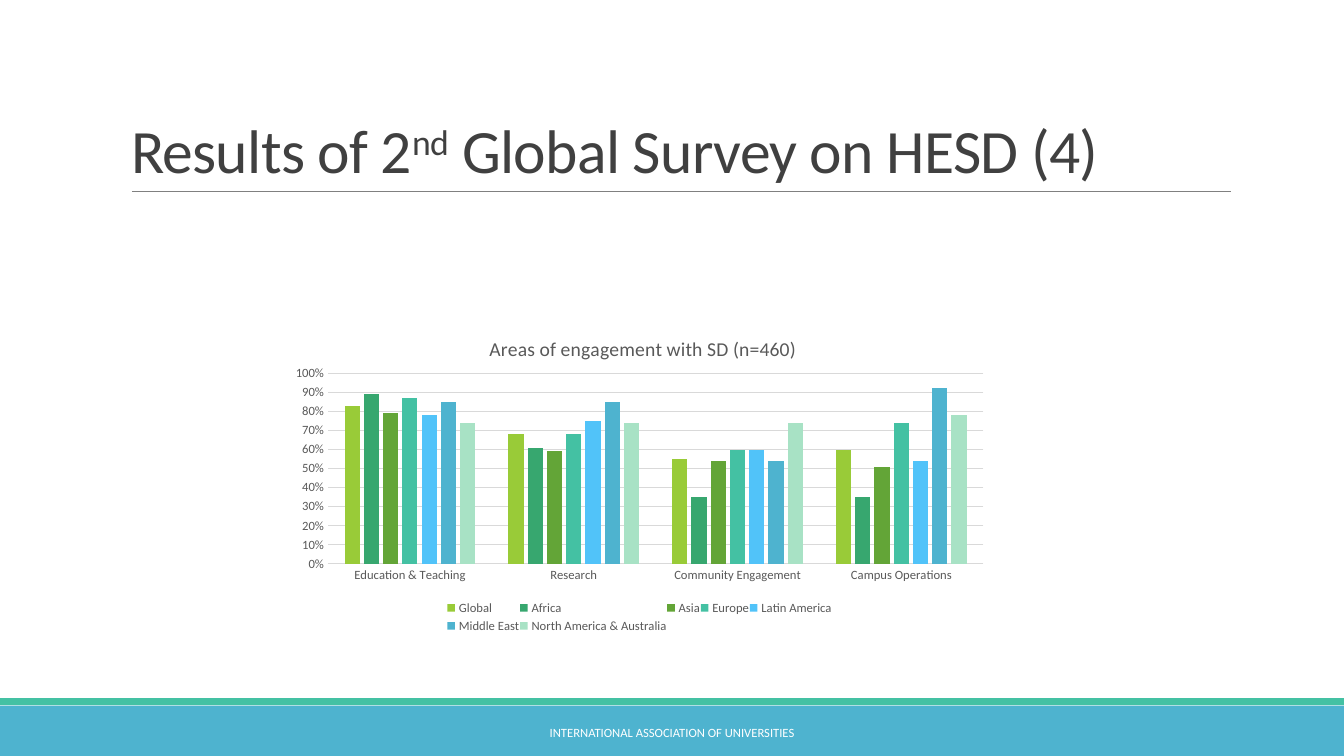
import pptx
import pptx.util
import pptx.dml.color
import pptx.chart.data
import pptx.enum.chart
import pptx.enum.shapes
import pptx.enum.text
import pptx.oxml
import pptx.oxml.ns

Pt = pptx.util.Pt
qn = pptx.oxml.ns.qn
PP_ALIGN = pptx.enum.text.PP_ALIGN
ANCHOR = pptx.enum.text.MSO_ANCHOR

CATEGORIES = ["Education & Teaching", "Research", "Community\u00a0Engagement", "Campus Operations"]
REGIONS = [
    ("Global", "99CB38", (0.83, 0.68, 0.55, 0.6)),
    ("Africa", "37A76F", (0.89, 0.61, 0.35, 0.35)),
    ("Asia", "63A537", (0.79, 0.59, 0.54, 0.51)),
    ("Europe", "44C1A3", (0.87, 0.68, 0.6, 0.74)),
    ("Latin America", "51C3F9", (0.78, 0.75, 0.6, 0.54)),
    ("Middle East", "4EB3CF", (0.85, 0.85, 0.54, 0.92)),
    ("North America & Australia", "A8E2C5", (0.74, 0.74, 0.74, 0.78)),
]


def rgb(value):
    return pptx.dml.color.RGBColor.from_string(value)


def place(element, index, **fractions):
    for old in element.findall(qn("c:layout")):
        element.remove(old)
    layout = pptx.oxml.parse_xml(f"<c:layout {pptx.oxml.ns.nsdecls('c')}><c:manualLayout/></c:layout>")
    settings = {"xMode": "edge", "yMode": "edge", **fractions}
    if element.tag == qn("c:plotArea"):
        settings = {"layoutTarget": "inner", **settings}
    for name, value in settings.items():
        layout[0].makeelement(qn("c:" + name))
        item = pptx.oxml.parse_xml(f'<c:{name} {pptx.oxml.ns.nsdecls("c")} val="{value}"/>')
        layout[0].append(item)
    element.insert(index, layout)


class SlideBuilder:
    font = "Calibri"
    muted = "595959"
    rule = "D9D9D9"

    def __init__(self, prs):
        self.s = prs.slides.add_slide(prs.slide_layouts[5])

    def style(self, font, size, color):
        font.name = self.font
        font.size = Pt(size)
        font.bold = False
        font.color.rgb = rgb(color)

    def band(self, x, y, w, h, color):
        sp = self.s.shapes.add_shape(pptx.enum.shapes.MSO_SHAPE.RECTANGLE, Pt(x), Pt(y), Pt(w), Pt(h))
        sp.shadow.inherit = False
        sp.fill.solid()
        sp.fill.fore_color.rgb = rgb(color)
        sp.line.fill.background()

    def divider(self, x1, x2, y, color):
        line = self.s.shapes.add_connector(
            pptx.enum.shapes.MSO_CONNECTOR.STRAIGHT, Pt(x1), Pt(y), Pt(x2), Pt(y))
        line.line.color.rgb = rgb(color)
        line.line.width = Pt(0.5)
        line._element.spPr.append(pptx.oxml.parse_xml(f"<a:effectLst {pptx.oxml.ns.nsdecls('a')}/>"))

    def title(self, x, y, w, h, parts):
        sp = self.s.shapes.title
        sp.left, sp.top, sp.width, sp.height = Pt(x), Pt(y), Pt(w), Pt(h)
        tf = sp.text_frame
        tf.auto_size = pptx.enum.text.MSO_AUTO_SIZE.NONE
        tf.vertical_anchor = ANCHOR.BOTTOM
        p = tf.paragraphs[0]
        p.alignment = PP_ALIGN.LEFT
        p.line_spacing = 0.85
        for text, baseline in parts:
            r = p.add_run()
            r.text = text
            self.style(r.font, 44, "404040")
            rPr = r.font._element
            rPr.set("spc", "-50")
            rPr.set("baseline", str(baseline * 1000))

    def label(self, x, y, w, h, text, size, color):
        tf = self.s.shapes.add_textbox(Pt(x), Pt(y), Pt(w), Pt(h)).text_frame
        tf.word_wrap = True
        tf.vertical_anchor = ANCHOR.MIDDLE
        tf.text = text
        p = tf.paragraphs[0]
        p.alignment = PP_ALIGN.CENTER
        self.style(p.runs[0].font, size, color)

    def column_chart(self, x, y, w, h, heading, categories, regions):
        data = pptx.chart.data.CategoryChartData(number_format="0%")
        data.categories = categories
        for name, color, values in regions:
            data.add_series(name, values)
        chart = self.s.shapes.add_chart(
            pptx.enum.chart.XL_CHART_TYPE.COLUMN_CLUSTERED, Pt(x), Pt(y), Pt(w), Pt(h), data).chart
        self.style(chart.font, 10, "000000")

        chart.has_title = True
        tf = chart.chart_title.text_frame
        tf.text = heading
        self.style(tf.paragraphs[0].runs[0].font, 14, self.muted)
        chart.chart_title.include_in_layout = False

        chart.has_legend = True
        legend = chart.legend
        legend.position = pptx.enum.chart.XL_LEGEND_POSITION.BOTTOM
        legend.include_in_layout = False
        self.style(legend.font, 9, self.muted)

        plot = chart.plots[0]
        plot.gap_width = 219
        plot.overlap = -27
        plot.vary_by_categories = False
        for series, (name, color, values) in zip(plot.series, regions):
            series.format.fill.solid()
            series.format.fill.fore_color.rgb = rgb(color)
            series.invert_if_negative = False

        for axis in (chart.category_axis, chart.value_axis):
            axis.major_tick_mark = pptx.enum.chart.XL_TICK_MARK.NONE
            axis.minor_tick_mark = pptx.enum.chart.XL_TICK_MARK.NONE
            self.style(axis.tick_labels.font, 9, self.muted)
        axis.minimum_scale, axis.maximum_scale, axis.major_unit = 0, 1, 0.1
        axis.tick_labels.number_format = "0%"
        axis.tick_labels.number_format_is_linked = False
        axis.format.line.fill.background()
        axis.has_major_gridlines = True
        for line in (chart.category_axis.format.line, axis.major_gridlines.format.line):
            line.color.rgb = rgb(self.rule)
            line.width = Pt(0.75)

        place(chart._chartSpace.chart.plotArea, 0, x=0.064, y=0.184, w=0.917, h=0.588)
        place(chart.chart_title._element, 1, x=0.285, y=0.055)
        place(legend._element, 1, x=0.23, y=0.875, w=0.54, h=0.12)


def main():
    prs = pptx.Presentation()
    prs.slide_width, prs.slide_height = Pt(960), Pt(540)
    slide = SlideBuilder(prs)
    slide.band(0, 504, 960, 36, "4EB3CF")
    slide.divider(94.3, 879, 136.8, "808080")
    slide.band(0, 498.7, 960, 5, "44C1A3")
    slide.title(86.4, 22.6, 792, 114.2,
                [("Results of 2", 0), ("nd", 30), (" Global Survey on HESD (4)", 0)])
    slide.label(290, 508.6, 380, 28.8, "INTERNATIONAL ASSOCIATION OF UNIVERSITIES", 9, "FFFFFF")
    slide.column_chart(201.6, 224, 510.5, 231.8,
                       "Areas of engagement with SD (n=460)", CATEGORIES, REGIONS)
    prs.save("out.pptx")


if __name__ == "__main__":
    main()
